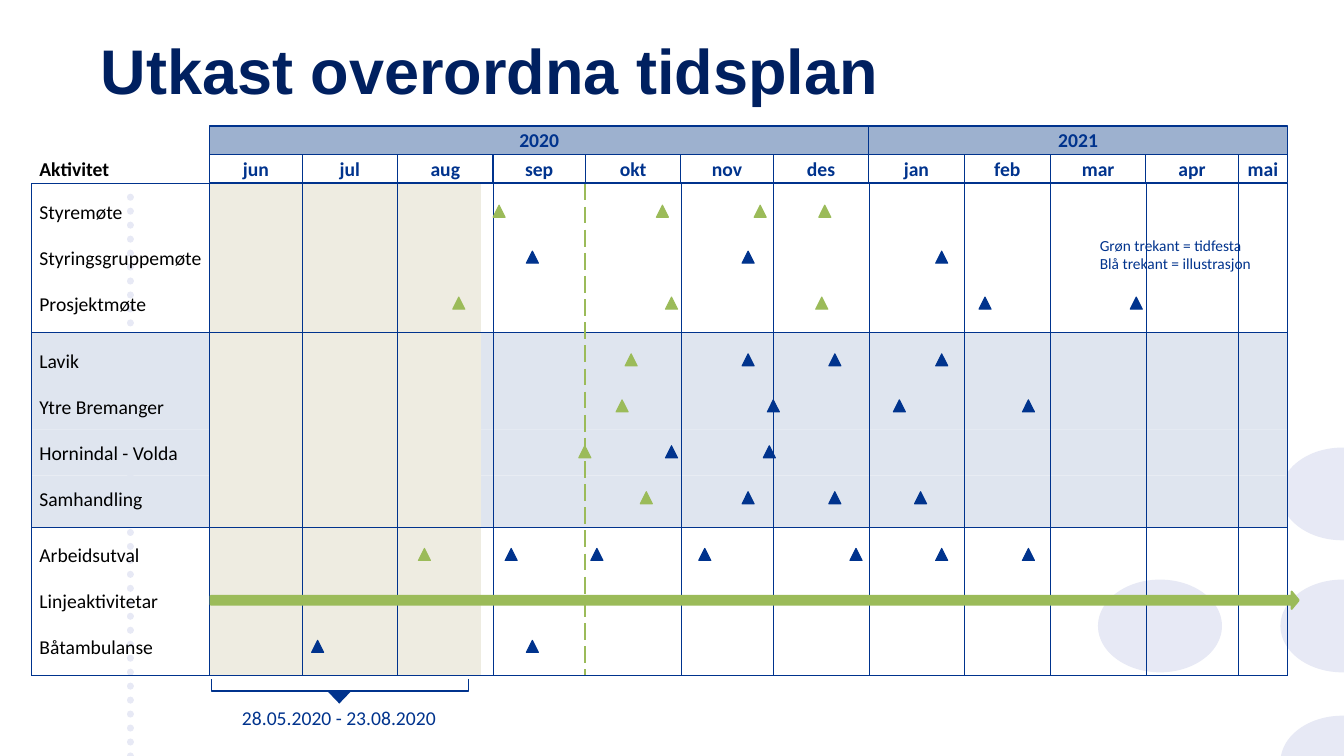
from dataclasses import dataclass
from itertools import accumulate

import pptx
import pptx.dml.color
import pptx.enum.dml
import pptx.enum.shapes
import pptx.enum.text
import pptx.oxml
import pptx.oxml.ns
import pptx.util

Inches = pptx.util.Inches
Pt = pptx.util.Pt
SHAPE = pptx.enum.shapes.MSO_SHAPE
DASH = pptx.enum.dml.MSO_LINE
ALIGN = pptx.enum.text.PP_ALIGN
ANCHOR = pptx.enum.text.MSO_ANCHOR


@dataclass(frozen=True)
class Theme:
    heading_font: str = "Arial"
    body_font: str = "Calibri"
    title: str = "002060"
    blue: str = "00338D"
    green: str = "9BBB59"
    year: str = "9DB1CF"
    band: str = "DFE5EF"
    past: str = "EEECE1"
    decoration: str = "E7E9F5"
    black: str = "000000"
    white: str = "FFFFFF"
    title_size: float = 45
    body_size: float = 14
    legend_size: float = 11
    thin: float = 0.25
    normal: float = 0.75
    thick: float = 1.5


THEME = Theme()

LEFT, CHART_LEFT, RIGHT = 0.31, 2.08, 12.77
YEAR_TOP, MONTH_TOP, TOP, BOTTOM = 1.25, 1.53, 1.82, 6.7
HEADER_HEIGHT = 0.28
ROW_STEP = 0.456
MARK = 0.12

# Month and number of days shown; the last month is cut off halfway.
MONTHS = [("jun", 30), ("jul", 31), ("aug", 31), ("sep", 30), ("okt", 31), ("nov", 30),
          ("des", 31), ("jan", 31), ("feb", 28), ("mar", 31), ("apr", 30), ("mai", 16)]
DAY = (RIGHT - CHART_LEFT) / sum(days for _, days in MONTHS)
MONTH_EDGES = [CHART_LEFT + DAY * days
               for days in accumulate((days for _, days in MONTHS), initial=0)]
YEARS = [("2020", 0, 7), ("2021", 7, 12)]
TODAY_EDGE = 4

# Label top of the first row, then (activity, fixed dates, illustrative dates).
GROUPS = [
    (1.985, [
        ("Styremøte", [4.89, 6.51, 7.48, 8.12], []),
        ("Styringsgruppemøte", [], [5.22, 7.36, 9.28]),
        ("Prosjektmøte", [4.49, 6.6, 8.09], [9.71, 11.21]),
    ]),
    (3.46, [
        ("Lavik", [6.2], [7.36, 8.22, 9.28]),
        ("Ytre Bremanger", [6.11], [7.61, 8.86, 10.14]),
        ("Hornindal - Volda", [5.74], [6.6, 7.57]),
        ("Samhandling", [6.35], [7.36, 8.22, 9.07]),
    ]),
    (5.39, [
        ("Arbeidsutval", [4.15], [5.01, 5.86, 6.93, 8.43, 9.28, 10.14]),
        ("Linjeaktivitetar", [], []),
        ("Båtambulanse", [], [3.09, 5.22]),
    ]),
]
GROUP_EDGES = [3.3, 5.23]
BAND_EDGES = [3.3, 3.81, 4.26, 4.72, 5.23]
ELLIPSES = [(12.7, 4.44), (12.7, 5.75), (10.89, 5.75), (12.7, 7.1)]


def rgb(color):
    return pptx.dml.color.RGBColor.from_string(color)


def add_run(paragraph, text, color, size=THEME.body_size, font=THEME.body_font, bold=False):
    run = paragraph.add_run()
    run.text = text
    run.font.name = font
    run.font.size = Pt(size)
    run.font.bold = bold
    run.font.color.rgb = rgb(color)


def set_margins(frame, horizontal, vertical):
    frame.margin_left = frame.margin_right = Inches(horizontal)
    frame.margin_top = frame.margin_bottom = Inches(vertical)


def add_shape(slide, kind, left, top, width, height, fill=None, line=None,
              line_width=THEME.normal):
    shape = slide.shapes.add_shape(kind, Inches(left), Inches(top), Inches(width), Inches(height))
    shape.shadow.inherit = False
    if fill:
        shape.fill.solid()
        shape.fill.fore_color.rgb = rgb(fill)
    else:
        shape.fill.background()
    if line:
        shape.line.color.rgb = rgb(line)
        shape.line.width = Pt(line_width)
    else:
        shape.line.fill.background()
    return shape


def add_line(slide, x1, y1, x2, y2, color=THEME.blue, width=THEME.normal, dash=None):
    line = slide.shapes.add_connector(pptx.enum.shapes.MSO_CONNECTOR.STRAIGHT,
                                      Inches(x1), Inches(y1), Inches(x2), Inches(y2))
    line.line.color.rgb = rgb(color)
    line.line.width = Pt(width)
    if dash:
        line.line.dash_style = dash
    properties = line._element.spPr
    properties.append(pptx.oxml.parse_xml(
        f'<a:effectLst {pptx.oxml.ns.nsdecls("a")}/>'))
    return line


def add_header(slide, text, left, right, top, fill=None):
    cell = add_shape(slide, SHAPE.RECTANGLE, left, top, right - left, HEADER_HEIGHT,
                     fill, THEME.blue)
    frame = cell.text_frame
    frame.word_wrap = False
    frame.vertical_anchor = ANCHOR.MIDDLE
    set_margins(frame, 0, 0.03)
    frame.paragraphs[0].alignment = ALIGN.CENTER
    add_run(frame.paragraphs[0], text, THEME.blue, bold=True)


def add_label(slide, text, top, bold=False):
    box = slide.shapes.add_textbox(Inches(0.39), Inches(top), Inches(1.69), Inches(0.23))
    box.text_frame.word_wrap = True
    set_margins(box.text_frame, 0, 0)
    add_run(box.text_frame.paragraphs[0], text, THEME.black, bold=bold)


def add_decoration(slide):
    dots = add_line(slide, 1.29, 7.5, 1.29, 1.87, THEME.decoration, 5, DASH.ROUND_DOT)
    dots._element.spPr.find(pptx.oxml.ns.qn("a:ln")).set("cap", "rnd")
    for left, top in ELLIPSES:
        add_shape(slide, SHAPE.OVAL, left, top, 1.23, 0.92, THEME.decoration)


def add_title(slide, text):
    title = slide.shapes.title
    title.left, title.top = Inches(0.9), Inches(0.25)
    title.width, title.height = Inches(11.19), Inches(0.86)
    frame = title.text_frame
    frame.vertical_anchor = ANCHOR.BOTTOM
    frame.auto_size = pptx.enum.text.MSO_AUTO_SIZE.NONE
    frame.paragraphs[0].alignment = ALIGN.LEFT
    add_run(frame.paragraphs[0], text, THEME.title, THEME.title_size, THEME.heading_font, True)


def add_grid(slide):
    for top, bottom in zip(BAND_EDGES, BAND_EDGES[1:]):
        add_shape(slide, SHAPE.RECTANGLE, LEFT, top, RIGHT - LEFT, bottom - top, THEME.band)
    add_shape(slide, SHAPE.RECTANGLE, CHART_LEFT, TOP, 2.69, BOTTOM - TOP, THEME.past)
    for year, first, last in YEARS:
        add_header(slide, year, MONTH_EDGES[first], MONTH_EDGES[last], YEAR_TOP, THEME.year)
    for (month, _), left, right in zip(MONTHS, MONTH_EDGES, MONTH_EDGES[1:]):
        add_header(slide, month, left, right, MONTH_TOP)
    for index, x in enumerate(MONTH_EDGES[1:-1], start=1):
        if index != TODAY_EDGE:
            add_line(slide, x, TOP, x, BOTTOM, width=THEME.thin)
    for x in (LEFT, CHART_LEFT, RIGHT):
        add_line(slide, x, TOP, x, BOTTOM)
    for y in GROUP_EDGES:
        add_line(slide, LEFT, y, RIGHT, y, width=THEME.thin)
    today = MONTH_EDGES[TODAY_EDGE]
    add_line(slide, today, TOP, today, BOTTOM, THEME.green, THEME.thick, DASH.LONG_DASH)
    for y in (TOP, BOTTOM):
        add_line(slide, LEFT, y, RIGHT, y)


def add_activities(slide):
    add_label(slide, "Aktivitet", 1.56, bold=True)
    arrow = add_shape(slide, SHAPE.RIGHT_ARROW, 2.09, 5.87, 10.79, 0.17,
                      THEME.green, THEME.green, THEME.thick)
    arrow.adjustments[1] = 0.41
    for group_top, activities in GROUPS:
        for row, (name, fixed, illustrative) in enumerate(activities):
            top = group_top + row * ROW_STEP
            add_label(slide, name, top)
            for color, dates in ((THEME.green, fixed), (THEME.blue, illustrative)):
                for left in dates:
                    add_shape(slide, SHAPE.ISOSCELES_TRIANGLE, left, top + 0.05, MARK, MARK,
                              color, color)


def add_period(slide, text):
    bracket = add_shape(slide, SHAPE.RIGHT_BRACKET, 3.31, 5.52, 0.12, 2.55, line=THEME.blue)
    bracket.rotation = 90
    bracket.adjustments[0] = 0
    pointer = add_shape(slide, SHAPE.ISOSCELES_TRIANGLE, 3.25, 6.86, 0.23, 0.12, THEME.blue)
    pointer.rotation = 180
    label = add_shape(slide, SHAPE.RECTANGLE, 2.4, 7, 1.92, 0.23, THEME.white)
    frame = label.text_frame
    frame.word_wrap = False
    frame.vertical_anchor = ANCHOR.TOP
    set_margins(frame, 0, 0)
    frame.paragraphs[0].alignment = ALIGN.LEFT
    add_run(frame.paragraphs[0], text, THEME.blue)


def add_legend(slide, lines):
    box = slide.shapes.add_textbox(Inches(10.81), Inches(2.29), Inches(2.07), Inches(0.47))
    frame = box.text_frame
    frame.word_wrap = True
    for index, text in enumerate(lines):
        paragraph = frame.add_paragraph() if index else frame.paragraphs[0]
        add_run(paragraph, text, THEME.blue, THEME.legend_size)


def main():
    presentation = pptx.Presentation()
    presentation.slide_width = Inches(13.33)
    presentation.slide_height = Inches(7.5)
    slide = presentation.slides.add_slide(presentation.slide_layouts[5])
    add_decoration(slide)
    add_title(slide, "Utkast overordna tidsplan")
    add_grid(slide)
    add_activities(slide)
    add_period(slide, "28.05.2020 - 23.08.2020")
    add_legend(slide, ["Grøn trekant = tidfesta", "Blå trekant = illustrasjon"])
    presentation.save("out.pptx")


if __name__ == "__main__":
    main()
